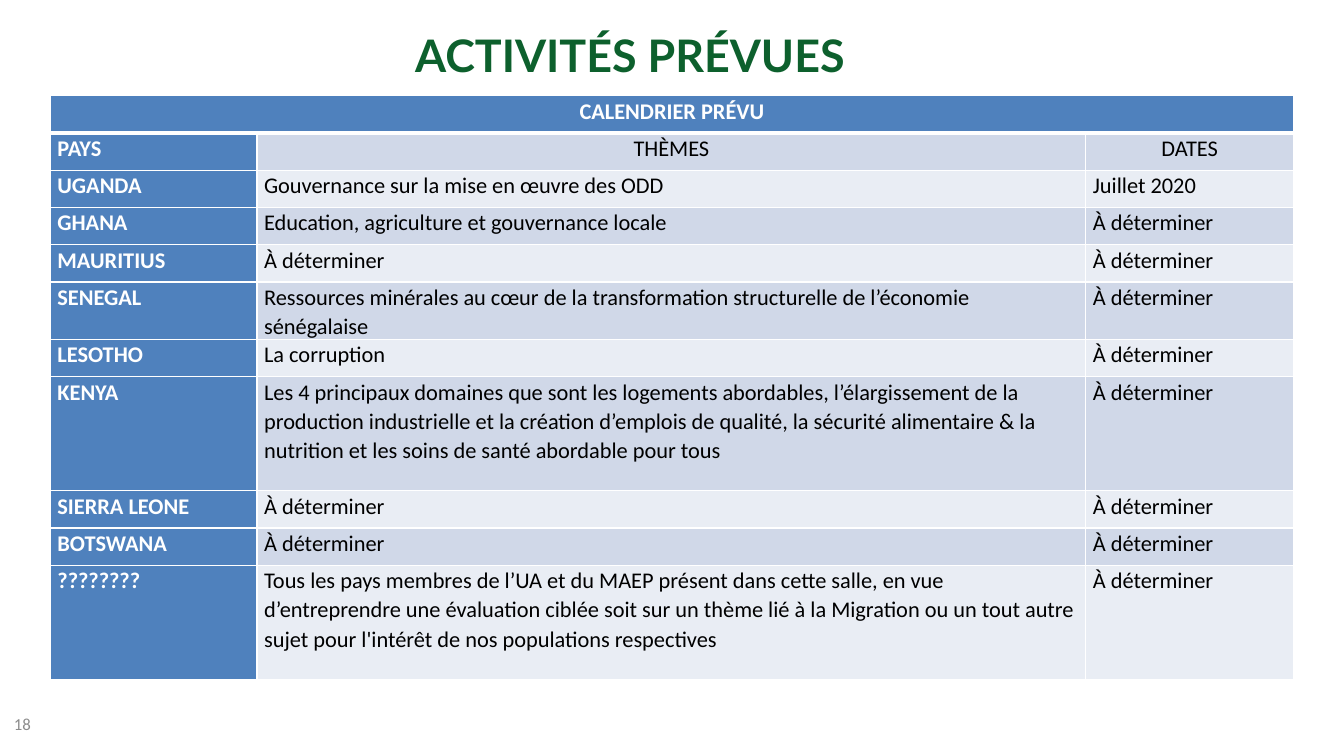
from lxml import etree
from pptx import Presentation
from pptx.dml.color import RGBColor
from pptx.enum import text
from pptx.oxml import ns
from pptx.util import Inches, Pt

TITLE = "ACTIVITÉS PRÉVUES"
PAGE_NUMBER = "18"
TABLE_HEADING = "CALENDRIER PRÉVU"
PENDING = "À déterminer"
SCHEDULE = [
    ("PAYS", "THÈMES", "DATES"),
    ("UGANDA", "Gouvernance sur la mise en œuvre des ODD", "Juillet 2020"),
    ("GHANA", "Education, agriculture et gouvernance locale", PENDING),
    ("MAURITIUS", PENDING, PENDING),
    ("SENEGAL", "Ressources minérales au cœur de la transformation structurelle "
     "de l’économie sénégalaise", PENDING),
    ("LESOTHO", "La corruption", PENDING),
    ("KENYA", "Les 4 principaux domaines que sont les logements abordables, "
     "l’élargissement de la production industrielle et la création d’emplois "
     "de qualité, la sécurité alimentaire & la nutrition et les soins de santé "
     "abordable pour tous", PENDING),
    ("SIERRA LEONE", PENDING, PENDING),
    ("BOTSWANA", PENDING, PENDING),
    ("????????", "Tous les pays membres de l’UA et du MAEP présent dans cette "
     "salle, en vue d’entreprendre une évaluation ciblée soit sur un thème lié "
     "à la Migration ou un tout autre sujet pour l'intérêt de nos populations "
     "respectives", PENDING),
]
COLUMN_WIDTHS = (2.05, 8.22, 2.06)
ROW_HEIGHT, TALL_ROW_HEIGHT = 0.37, 1.13
TALL_COUNTRIES = ("KENYA", "????????")

GREEN = RGBColor(0x0D, 0x60, 0x2D)
BLUE = RGBColor(0x4F, 0x81, 0xBD)
BANDS = (RGBColor(0xE9, 0xED, 0xF4), RGBColor(0xD0, 0xD8, 0xE8))
GREY = RGBColor(0x8C, 0x8C, 0x8C)
WHITE = RGBColor(0xFF, 0xFF, 0xFF)
BLACK = RGBColor(0, 0, 0)


def set_font(para, name, size, color, bold=False):
    font = para.font
    font.name, font.size, font.bold = name, Pt(size), bold
    font.color.rgb = color


def add_borders(cell, **widths):
    """Draw white borders, 1 pt wide unless a side (L, R, T, B) says otherwise."""
    properties = cell._tc.get_or_add_tcPr()
    for side in "LRTB":
        line = etree.SubElement(properties, ns.qn(f"a:ln{side}"),
                                w=str(Pt(widths.get(side, 1))))
        fill = etree.SubElement(line, ns.qn("a:solidFill"))
        etree.SubElement(fill, ns.qn("a:srgbClr"), val=str(WHITE))


def fill_cell(cell, words, row, column):
    is_blue = row == 0 or column == 0
    is_centred = row == 0 or (row == 1 and column > 0)
    cell.margin_left = cell.margin_right = Inches(0.07)
    cell.margin_top = cell.margin_bottom = 0
    cell.vertical_anchor = text.MSO_ANCHOR.TOP
    add_borders(cell, **{0: {"B": 3}, 1: {"T": 3}}.get(row, {}))
    cell.fill.solid()
    cell.fill.fore_color.rgb = BLUE if is_blue else BANDS[row % 2]
    cell.text = words
    para = cell.text_frame.paragraphs[0]
    para.line_spacing = 1.07
    para.alignment = text.PP_ALIGN.CENTER if is_centred else text.PP_ALIGN.LEFT
    set_font(para, "Calibri", 16, WHITE if is_blue else BLACK, is_blue)


deck = Presentation()
deck.slide_width, deck.slide_height = Inches(13.33), Inches(7.5)
page = deck.slides.add_slide(deck.slide_layouts[5])

title = page.shapes.title
title.left, title.top = Inches(2.85), Inches(0.13)
title.width, title.height = Inches(6.8), Inches(0.82)
title.text_frame.text = TITLE
title.text_frame.vertical_anchor = text.MSO_ANCHOR.MIDDLE
title_para = title.text_frame.paragraphs[0]
title_para.alignment = text.PP_ALIGN.CENTER
set_font(title_para, "Lato", 32, GREEN, True)

number_box = page.shapes.add_textbox(Inches(0.04), Inches(6.98), Inches(3.11), Inches(0.4))
number_box.text_frame.word_wrap = True
number_box.text_frame.vertical_anchor = text.MSO_ANCHOR.MIDDLE
number_box.text_frame.text = PAGE_NUMBER
set_font(number_box.text_frame.paragraphs[0], "Calibri", 12, GREY)

rows = [(TABLE_HEADING, "", "")] + SCHEDULE
heights = [TALL_ROW_HEIGHT if row[0] in TALL_COUNTRIES else ROW_HEIGHT for row in rows]
table = page.shapes.add_table(len(rows), len(COLUMN_WIDTHS), Inches(0.5), Inches(0.95),
                              Inches(sum(COLUMN_WIDTHS)), Inches(sum(heights))).table
table.first_col = True
for column, width in zip(table.columns, COLUMN_WIDTHS):
    column.width = Inches(width)
for row, (words_in_row, height) in enumerate(zip(rows, heights)):
    table.rows[row].height = Inches(height)
    for column, words in enumerate(words_in_row):
        fill_cell(table.cell(row, column), words, row, column)
table.cell(0, 0).merge(table.cell(0, len(COLUMN_WIDTHS) - 1))

deck.save("out.pptx")
